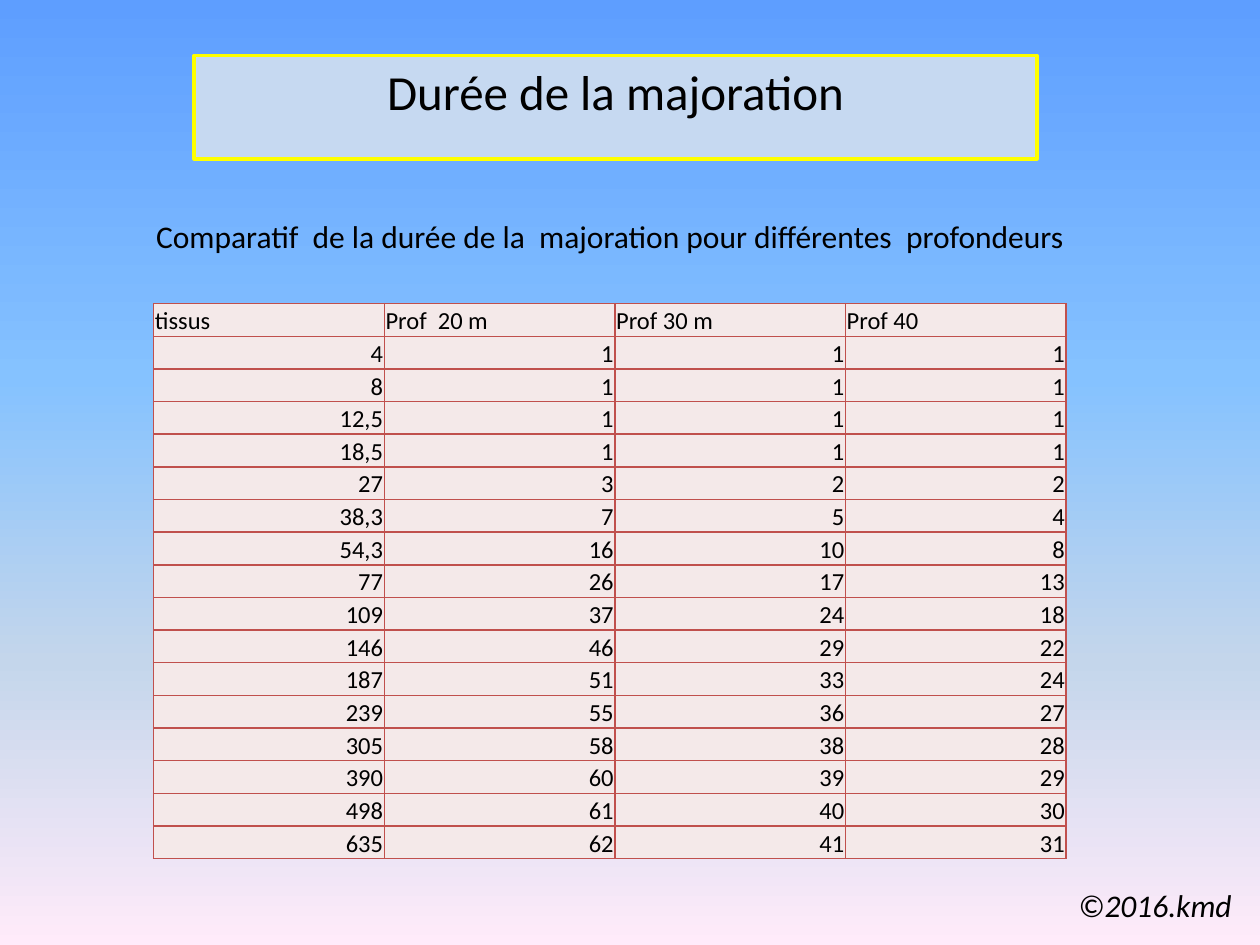
"""Build a slide that compares how long the increase lasts at several depths."""
from lxml import etree
from pptx import Presentation
from pptx import util as u
from pptx.dml.color import RGBColor
from pptx.enum import text
from pptx.oxml.ns import qn

TITLE = "Durée de la majoration"
SUBTITLE = "Comparatif  de la durée de la  majoration pour différentes  profondeurs"
CREDIT = "©2016.kmd"
HEADERS = ("tissus", "Prof  20 m", "Prof 30 m", "Prof 40")
DURATIONS = [
    ("4", 1, 1, 1), ("8", 1, 1, 1), ("12,5", 1, 1, 1), ("18,5", 1, 1, 1),
    ("27", 3, 2, 2), ("38,3", 7, 5, 4), ("54,3", 16, 10, 8), ("77", 26, 17, 13),
    ("109", 37, 24, 18), ("146", 46, 29, 22), ("187", 51, 33, 24),
    ("239", 55, 36, 27), ("305", 58, 38, 28), ("390", 60, 39, 29),
    ("498", 61, 40, 30), ("635", 62, 41, 31),
]
SKY = ((0, "5E9EFF"), (40, "85C2FF"), (70, "C4D6EB"), (100, "FFEBFA"))
COLUMN_WIDTHS = (1.83, 1.83, 1.83, 1.75)
ROW_HEIGHT = 4.41 / (len(DURATIONS) + 1)


def color(value):
    return RGBColor.from_string(value)


def write(frame, words, size=18, align=text.PP_ALIGN.LEFT, italic=False):
    paragraph = frame.paragraphs[0]
    paragraph.alignment = align
    run = paragraph.add_run()
    run.text = str(words)
    run.font.name, run.font.size = "Calibri", u.Pt(size)
    run.font.italic = italic
    run.font.color.rgb = color("000000")


def add_label(slide, box, words, wrap, **style):
    frame = slide.shapes.add_textbox(*map(u.Inches, box)).text_frame
    frame.word_wrap = wrap
    frame.auto_size = text.MSO_AUTO_SIZE.SHAPE_TO_FIT_TEXT
    write(frame, words, **style)


def paint_sky(slide):
    fill = slide.background.fill
    fill.gradient()
    fill.gradient_angle = 270
    stops = next(slide.element.iter(qn("a:gsLst")))
    for stop in list(stops):
        stops.remove(stop)
    for share, value in SKY:
        stop = etree.SubElement(stops, qn("a:gs"), pos=str(share * 1000))
        etree.SubElement(stop, qn("a:srgbClr"), val=value)


def add_title(slide):
    title = slide.shapes.title
    title.left, title.top, title.width, title.height = map(u.Inches, (1.54, 0.44, 6.69, 0.82))
    title.fill.solid()
    title.fill.fore_color.rgb = color("C6D9F1")
    title.line.color.rgb = color("FFFF00")
    title.line.width = u.Pt(2)
    title.text_frame.vertical_anchor = text.MSO_ANCHOR.TOP
    title.text_frame.auto_size = text.MSO_AUTO_SIZE.NONE
    write(title.text_frame, TITLE, size=28, align=text.PP_ALIGN.CENTER)


def format_cell(cell):
    cell.margin_left = cell.margin_right = cell.margin_top = u.Inches(0.01)
    cell.margin_bottom = 0
    cell.vertical_anchor = text.MSO_ANCHOR.BOTTOM
    properties = cell._tc.get_or_add_tcPr()
    for side in ("lnL", "lnR", "lnT", "lnB"):
        border = etree.SubElement(properties, qn(f"a:{side}"), w=str(u.Pt(1)))
        paint = etree.SubElement(border, qn("a:solidFill"))
        etree.SubElement(paint, qn("a:srgbClr"), val="C0504D")
    cell.fill.solid()
    cell.fill.fore_color.rgb = color("F4E9E9")


def add_durations(slide):
    rows = [HEADERS, *DURATIONS]
    box = (1.22, 2.41, sum(COLUMN_WIDTHS), ROW_HEIGHT * len(rows))
    table = slide.shapes.add_table(len(rows), len(HEADERS), *map(u.Inches, box)).table
    table.first_row = table.horz_banding = False
    for column, width in zip(table.columns, COLUMN_WIDTHS):
        column.width = u.Inches(width)
    for r, values in enumerate(rows):
        table.rows[r].height = u.Inches(ROW_HEIGHT)
        for c, value in enumerate(values):
            cell = table.cell(r, c)
            format_cell(cell)
            align = text.PP_ALIGN.RIGHT if r else text.PP_ALIGN.LEFT
            write(cell.text_frame, value, size=14, align=align)


def main():
    deck = Presentation()
    deck.slide_width, deck.slide_height = u.Inches(10), u.Inches(7.5)
    slide = deck.slides.add_slide(deck.slide_layouts[5])
    paint_sky(slide)
    add_durations(slide)
    add_title(slide)
    add_label(slide, (8.46, 6.98, 1.43, 0.4), CREDIT, wrap=False, italic=True)
    add_label(slide, (1.14, 1.67, 7.48, 0.4), SUBTITLE, wrap=True)
    deck.save("out.pptx")


if __name__ == "__main__":
    main()
